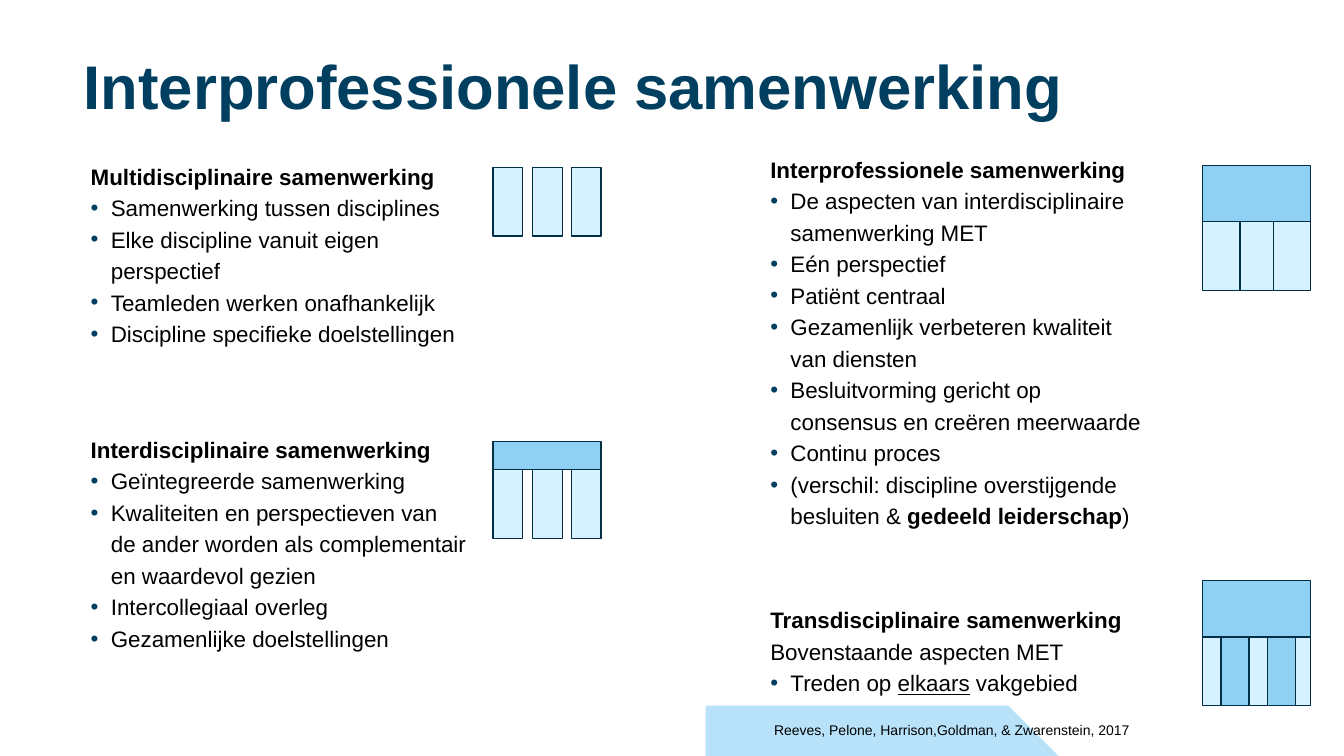
from lxml.etree import SubElement
from pptx import Presentation
from pptx.dml.color import RGBColor
from pptx.enum.shapes import MSO_SHAPE
from pptx.oxml.ns import qn
from pptx.util import Inches, Pt

NAVY = RGBColor(0x00, 0x3F, 0x5F)
OUTLINE = RGBColor(0x00, 0x2F, 0x46)
PALE = RGBColor(0xD6, 0xF1, 0xFF)
SKY = RGBColor(0x90, 0xD0, 0xF3)
WAVE = RGBColor(0xB7, 0xE2, 0xFA)
BLACK = RGBColor(0, 0, 0)
FONT = "Arial"

TITLE = "Interprofessionele samenwerking"
SOURCE = "Reeves, Pelone, Harrison,Goldman, & Zwarenstein, 2017"

BLOCKS = [
    ((0.9, 1.57, 3.74, 2.34), "Multidisciplinaire samenwerking", None, [
        "Samenwerking tussen disciplines",
        "Elke discipline vanuit eigen perspectief",
        "Teamleden werken onafhankelijk",
        "Discipline specifieke doelstellingen",
    ]),
    ((0.9, 4.28, 3.74, 2.56), "Interdisciplinaire samenwerking", None, [
        "Geïntegreerde samenwerking",
        "Kwaliteiten en perspectieven van de ander worden als complementair en waardevol gezien",
        "Intercollegiaal overleg",
        "Gezamenlijke doelstellingen",
    ]),
    ((7.64, 5.97, 3.74, 1.28), "Transdisciplinaire samenwerking", "Bovenstaande aspecten MET", [
        [("Treden op ", ""), ("elkaars", "u"), (" vakgebied", "")],
    ]),
    ((7.64, 1.5, 3.74, 3.42), "Interprofessionele samenwerking", None, [
        "De aspecten van interdisciplinaire samenwerking MET",
        "Eén perspectief",
        "Patiënt centraal",
        "Gezamenlijk verbeteren kwaliteit van diensten",
        "Besluitvorming gericht op consensus en creëren meerwaarde",
        "Continu proces",
        [("(verschil: discipline overstijgende besluiten & ", ""),
         ("gedeeld leiderschap", "b"), (")", "")],
    ]),
]

SPACED = [(0, 0.29, PALE), (0.39, 0.3, PALE), (0.78, 0.29, PALE)]
JOINED = [(0, 0.37, PALE), (0.37, 0.33, PALE), (0.7, 0.37, PALE)]
OVERLAPPING = [(0, 0.3, PALE), (0.37, 0.28, PALE), (0.78, 0.29, PALE),
               (0.18, 0.28, SKY), (0.64, 0.28, SKY)]
DIAGRAMS = [
    (4.89, 1.66, 0, SPACED),
    (4.89, 4.38, 0.28, SPACED),
    (11.93, 1.64, 0.56, JOINED),
    (11.93, 5.76, 0.56, OVERLAPPING),
]
ROOF_W, PILLAR_H = 1.07, 0.68

WAVE_START = (7.25, 7.5)
WAVE_CURVES = [
    ((7.43, 7.34), (7.64, 7.22), (7.87, 7.14)),
    ((8.84, 6.8), (8.84, 6.8), (8.84, 6.8)),
    ((9.36, 6.62), (9.94, 6.7), (10.4, 7.01)),
]
WAVE_END = (11.11, 7.5)
STEPS = 24

prs = Presentation()
prs.slide_width, prs.slide_height = Inches(13.33), Inches(7.5)
s = prs.slides.add_slide(prs.slide_layouts[6])


def curve_points(start, curves):
    for a, b, end in curves:
        for i in range(1, STEPS + 1):
            t = i / STEPS
            u = 1 - t
            yield tuple(u**3 * p0 + 3 * u * u * t * p1 + 3 * u * t * t * p2 + t**3 * p3
                        for p0, p1, p2, p3 in zip(start, a, b, end))
        start = end


def add_text(p, text, size, color=BLACK, style=""):
    r = p.add_run()
    r.text = text
    f = r.font
    f.name, f.size = FONT, Pt(size)
    f.bold, f.underline = "b" in style, "u" in style
    f.color.rgb = color


def add_box(box, inset=True):
    tf = s.shapes.add_textbox(*map(Inches, box)).text_frame
    tf.word_wrap = True
    if not inset:
        tf.margin_left = tf.margin_top = tf.margin_right = tf.margin_bottom = 0
    return tf


def add_bullet(p):
    pPr = p._p.get_or_add_pPr()
    pPr.set("marL", str(Inches(0.2)))
    pPr.set("indent", str(-Inches(0.2)))
    SubElement(SubElement(pPr, qn("a:buClr")), qn("a:srgbClr")).set("val", str(NAVY))
    SubElement(pPr, qn("a:buFont")).set("typeface", FONT)
    SubElement(pPr, qn("a:buChar")).set("char", "•")


def add_block(box, heading, intro, bullets):
    tf = add_box(box, inset=False)
    lines = [([(heading, "b")], False)]
    if intro:
        lines.append(([(intro, "")], False))
    lines += [([(b, "")] if isinstance(b, str) else b, True) for b in bullets]
    for i, (runs, bulleted) in enumerate(lines):
        p = tf.add_paragraph() if i else tf.paragraphs[0]
        p.line_spacing = Pt(22.5)
        if bulleted:
            add_bullet(p)
        for text, style in runs:
            add_text(p, text, 16, style=style)


def add_rect(x, y, w, h, color):
    sp = s.shapes.add_shape(MSO_SHAPE.RECTANGLE, *map(Inches, (x, y, w, h)))
    sp.shadow.inherit = False
    sp.fill.solid()
    sp.fill.fore_color.rgb = color
    sp.line.color.rgb = OUTLINE
    sp.line.width = Pt(1)


fb = s.shapes.build_freeform(*WAVE_START, scale=Inches(1))
fb.add_line_segments([*curve_points(WAVE_START, WAVE_CURVES), WAVE_END], close=True)
wave = fb.convert_to_shape()
wave.shadow.inherit = False
wave.fill.solid()
wave.fill.fore_color.rgb = WAVE
wave.line.fill.background()

p = add_box((0.83, 0.4, 10.55, 1.18), inset=False).paragraphs[0]
p.line_spacing = 1.1
add_text(p, TITLE, 44, NAVY, "b")

for block in BLOCKS:
    add_block(*block)

add_text(add_box((7.58, 7.11, 3.86, 0.27)).paragraphs[0], SOURCE, 10)

for x, y, roof_h, pillars in DIAGRAMS:
    if roof_h:
        add_rect(x, y, ROOF_W, roof_h, SKY)
    for dx, w, color in pillars:
        add_rect(x + dx, y + roof_h, w, PILLAR_H, color)

prs.save("out.pptx")
